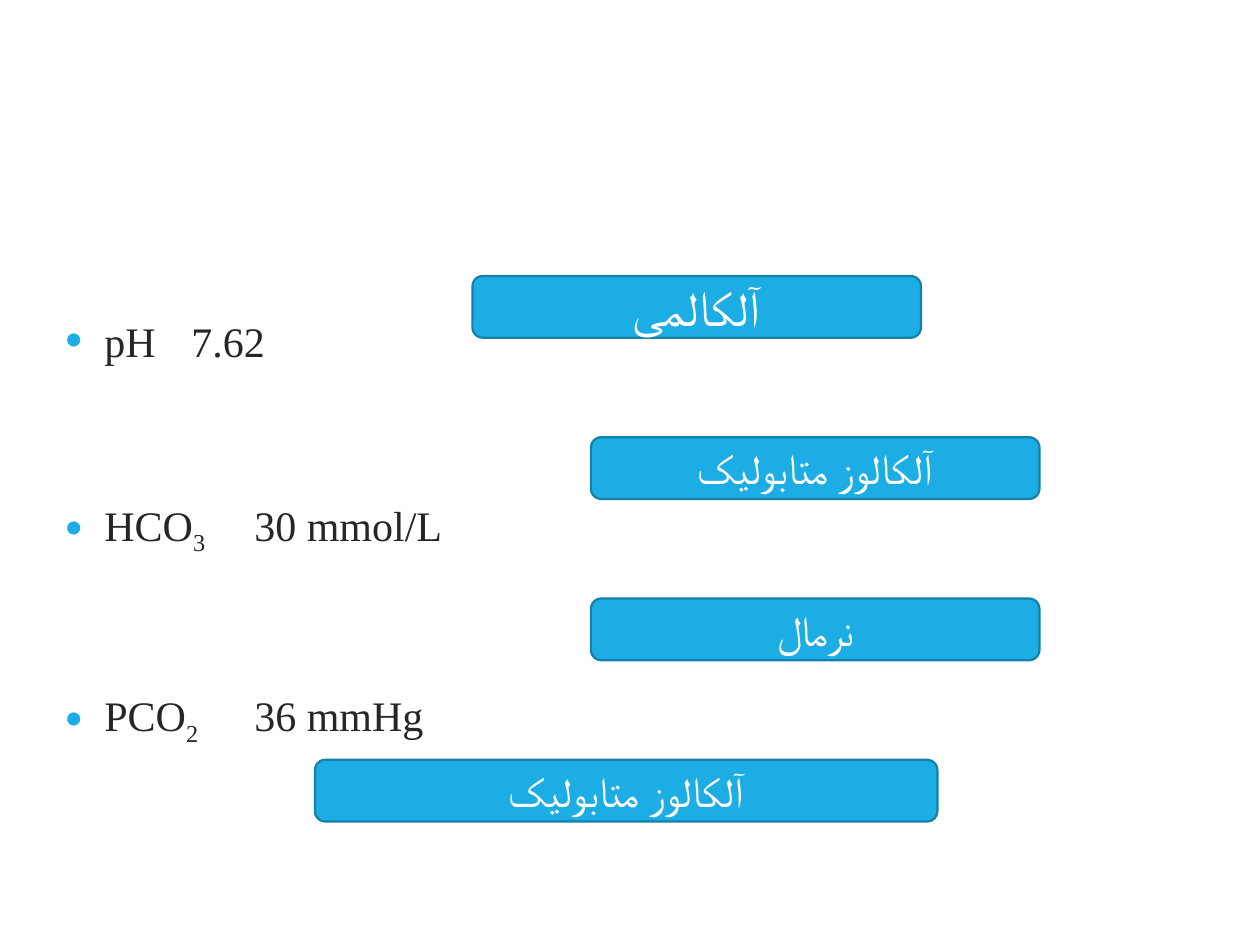
from lxml.etree import SubElement
from pptx import Presentation
from pptx.dml.color import RGBColor
from pptx.enum.shapes import MSO_SHAPE as Shape
from pptx.enum.text import MSO_ANCHOR as Anchor, PP_ALIGN as Align
from pptx.oxml.ns import qn
from pptx.util import Inches, Pt

FONT = "Times New Roman"
ACCENT, OUTLINE, WHITE, INK = "1CADE4", "1580A9", "FFFFFF", "262626"

# Name, subscript, value
READINGS = [
    ("pH", "", "7.62"),
    ("HCO", "3", "30 mmol/L"),
    ("PCO", "2", "36 mmHg"),
]
# Left, width, wording, text size
DIAGNOSES = [
    (3.75, 3.56, "آلکالمی", 28),
    (4.69, 3.56, "آلکالوز متابولیک", 24),
    (4.69, 3.56, "نرمال", 24),
    (2.5, 4.94, "آلکالوز متابولیک", 24),
]
FIRST_TOP, STEP, LABEL_HEIGHT = 2.19, 1.28, 0.49


def color(hex_code):
    return RGBColor.from_string(hex_code)


def add_run(paragraph, text, size, hex_code, baseline=None):
    run = paragraph.add_run()
    run.text = text
    run.font.name = FONT
    run.font.size = Pt(size)
    run.font.color.rgb = color(hex_code)
    if baseline:
        run.font._element.set("baseline", str(baseline))


def add_bullet_and_tabs(paragraph):
    props = paragraph._p.get_or_add_pPr()
    props.set("marL", str(Inches(0.31)))
    props.set("indent", str(-Inches(0.31)))
    bullet_color = SubElement(props, qn("a:buClr"))
    SubElement(bullet_color, qn("a:srgbClr"), val=ACCENT)
    SubElement(props, qn("a:buSzPct"), val="115000")
    SubElement(props, qn("a:buFont"), typeface="Arial")
    SubElement(props, qn("a:buChar"), char="•")
    tabs = SubElement(props, qn("a:tabLst"))
    for stop in (1, 1.5):
        SubElement(tabs, qn("a:tab"), pos=str(Inches(stop)), algn="l")


def add_readings(slide):
    box = slide.shapes.add_textbox(Inches(0.42), Inches(1.58), Inches(9), Inches(5.42))
    frame = box.text_frame
    frame.word_wrap = True
    frame.margin_top = Inches(0.12)
    for index, (name, subscript, value) in enumerate(READINGS):
        paragraph = frame.add_paragraph() if index else frame.paragraphs[0]
        add_bullet_and_tabs(paragraph)
        paragraph.line_spacing = 3.0
        paragraph.space_after = Pt(6)
        if index:
            paragraph.space_before = Pt(4.8)
        add_run(paragraph, name, 24, INK)
        if subscript:
            add_run(paragraph, subscript + "\t", 24, INK, baseline=-25000)
            add_run(paragraph, value, 24, INK)
        else:
            add_run(paragraph, "\t" + value, 24, INK)


def add_diagnosis(slide, left, top, width, text, size):
    label = slide.shapes.add_shape(
        Shape.ROUNDED_RECTANGLE, Inches(left), Inches(top), Inches(width), Inches(LABEL_HEIGHT)
    )
    label.shadow.inherit = False
    label.fill.solid()
    label.fill.fore_color.rgb = color(ACCENT)
    label.line.color.rgb = color(OUTLINE)
    label.line.width = Pt(1.25)
    frame = label.text_frame
    frame.word_wrap = True
    frame.vertical_anchor = Anchor.MIDDLE
    paragraph = frame.paragraphs[0]
    paragraph.alignment = Align.CENTER
    paragraph._p.get_or_add_pPr().set("rtl", "1")
    add_run(paragraph, text, size, WHITE)


def main():
    deck = Presentation()
    deck.slide_width, deck.slide_height = Inches(10), Inches(7.5)
    slide = deck.slides.add_slide(deck.slide_layouts[6])
    add_readings(slide)
    for row, (left, width, text, size) in enumerate(DIAGNOSES):
        add_diagnosis(slide, left, FIRST_TOP + row * STEP, width, text, size)
    deck.save("out.pptx")


if __name__ == "__main__":
    main()
